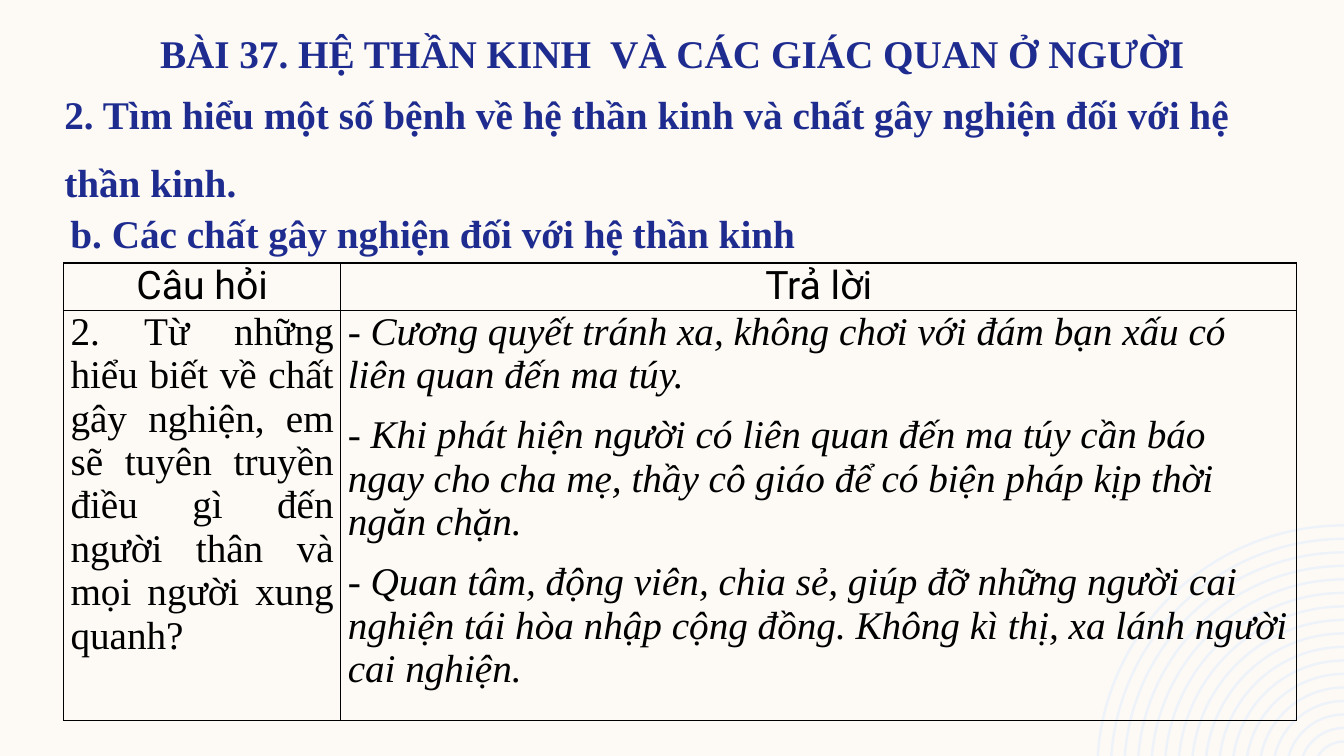
from dataclasses import dataclass
from math import asin, cos, degrees, sin

from lxml import etree
from pptx import Presentation
from pptx import util as u
from pptx.dml.color import RGBColor
from pptx.enum import text
from pptx.oxml import ns

Inches, Pt = u.Inches, u.Pt
ALIGN = text.PP_ALIGN


@dataclass(frozen=True)
class Theme:
    paper: str = "FDFAF6"
    ring: str = "EEF3FA"
    head: str = "1F2C8F"
    ink: str = "000000"
    serif: str = "Times New Roman"
    sans: str = "Roboto"
    size: int = 28
    line: int = 1


THEME = Theme()
WIDTH, HEIGHT = 13.33, 7.5

HEADER = ("Câu hỏi", "Trả lời")
ASK = ("2. Từ những hiểu biết về chất gây nghiện, em sẽ tuyên truyền "
       "điều gì đến người thân và mọi người xung quanh?")
REPLIES = (
    "- Cương quyết tránh xa, không chơi với đám bạn xấu có liên quan đến ma túy.",
    "- Khi phát hiện người có liên quan đến ma túy cần báo ngay cho cha mẹ, "
    "thầy cô giáo để có biện pháp kịp thời ngăn chặn.",
    "- Quan tâm, động viên, chia sẻ, giúp đỡ những người cai nghiện tái hòa nhập "
    "cộng đồng. Không kì thị, xa lánh người cai nghiện.",
)


def color(code):
    return RGBColor.from_string(code)


def add(parent, tag, **attrs):
    values = {key: str(round(value)) for key, value in attrs.items()}
    return etree.SubElement(parent, ns.qn("a:" + tag), values)


def write(para, words, font=THEME.serif, ink=THEME.ink, bold=False,
          italic=False, align=ALIGN.LEFT, before=0, after=0, lead=None):
    para.alignment = align
    para.space_before, para.space_after = Pt(before), Pt(after)
    if lead:
        para.line_spacing = lead
    run = para.add_run()
    run.text = words
    face = run.font
    face.name, face.size = font, Pt(THEME.size)
    face.bold, face.italic = bold, italic
    face.color.rgb = color(ink)


def heading(slide, box, words, top=0, grow=False, **style):
    frame = slide.shapes.add_textbox(*map(Inches, box)).text_frame
    frame.word_wrap = True
    frame.margin_top = Inches(top)
    if grow:
        frame.auto_size = text.MSO_AUTO_SIZE.SHAPE_TO_FIT_TEXT
    write(frame.paragraphs[0], words, ink=THEME.head, bold=True, **style)


def ring(route, radius, thick, wide, high, drop):
    """Add one band, its centre lying on the right edge, drop below the bottom."""
    inner = radius - thick
    out, back = asin(drop / radius), asin(drop / inner)

    def arc(size, start, sweep):
        add(route, "arcTo", wR=size * 1000, hR=size * 1000,
            stAng=start * 60000, swAng=sweep * 60000)

    def point(tag, x, y):
        add(add(route, tag), "pt", x=x * 1000, y=y * 1000)

    point("moveTo", wide - radius * cos(out), high + drop - radius * sin(out))
    arc(radius, 180 + degrees(out), 90 - degrees(out))
    point("lnTo", wide, high + drop - inner)
    arc(inner, 270, degrees(back) - 90)
    add(route, "close")


def rings(slide, count=17, outer=2.46, step=0.134, thick=0.025, drop=0.16):
    """Concentric quarter rings in the bottom right corner."""
    left, top = 10.88, 5.2
    wide, high = WIDTH - left, HEIGHT - top
    edges = [(x * 1000, y * 1000) for x, y in
             ((left, top), (WIDTH, top), (WIDTH, HEIGHT), (left, HEIGHT))]
    pen = slide.shapes.build_freeform(*edges[0], scale=Inches(1) / 1000)
    pen.add_line_segments(edges[1:], close=True)
    shape = pen.convert_to_shape()
    route = next(shape._element.iter(ns.qn("a:path")))
    for part in list(route):
        route.remove(part)
    for i in range(count):
        ring(route, outer - step * i, thick, wide, high, drop)
    shape.shadow.inherit = False
    shape.fill.solid()
    shape.fill.fore_color.rgb = color(THEME.ring)
    shape.line.fill.background()


def border(cell):
    props = cell._tc.get_or_add_tcPr()
    for i, side in enumerate(("lnL", "lnR", "lnT", "lnB")):
        edge = add(props, side, w=Pt(THEME.line))
        add(add(edge, "solidFill"), "srgbClr").set("val", THEME.ink)
        props.insert(i, edge)


def fill_cell(cell, lines, **style):
    cell.fill.background()
    border(cell)
    cell.margin_left = cell.margin_right = Inches(0.07)
    cell.margin_top = cell.margin_bottom = 0
    frame = cell.text_frame
    for i, words in enumerate(lines):
        para = frame.add_paragraph() if i else frame.paragraphs[0]
        write(para, words, **style)


def answers(slide):
    cols, rows = (2.75, 9.48), (0.47, 4.06)
    box = (0.63, 2.61, sum(cols), sum(rows))
    table = slide.shapes.add_table(2, 2, *map(Inches, box)).table
    table.first_row = table.horz_banding = False
    for col, width in zip(table.columns, cols):
        col.width = Inches(width)
    for row, height in zip(table.rows, rows):
        row.height = Inches(height)
    for i, words in enumerate(HEADER):
        fill_cell(table.cell(0, i), [words], font=THEME.sans,
                  align=ALIGN.CENTER, before=27, after=3)
    fill_cell(table.cell(1, 0), [ASK], align=ALIGN.JUSTIFY, before=2, after=3)
    fill_cell(table.cell(1, 1), REPLIES, italic=True, before=2, after=10)


def main():
    deck = Presentation()
    deck.slide_width, deck.slide_height = Inches(WIDTH), Inches(HEIGHT)
    slide = deck.slides.add_slide(deck.slide_layouts[6])
    back = slide.background.fill
    back.solid()
    back.fore_color.rgb = color(THEME.paper)

    rings(slide)
    heading(slide, (0, 0.08, WIDTH, 0.65),
            "BÀI 37. HỆ THẦN KINH  VÀ CÁC GIÁC QUAN Ở NGƯỜI",
            align=ALIGN.CENTER, lead=Pt(48.8))
    heading(slide, (0.54, 0.68, 12.33, 0.65),
            "2. Tìm hiểu một số bệnh về hệ thần kinh và chất gây nghiện "
            "đối với hệ thần kinh.", lead=Pt(48.8))
    answers(slide)
    heading(slide, (0.6, 1.96, 8.29, 0.6),
            "b. Các chất gây nghiện đối với hệ thần kinh", top=0.05, grow=True,
            align=ALIGN.JUSTIFY, before=27, after=3, lead=1.15)
    deck.save("out.pptx")


if __name__ == "__main__":
    main()
